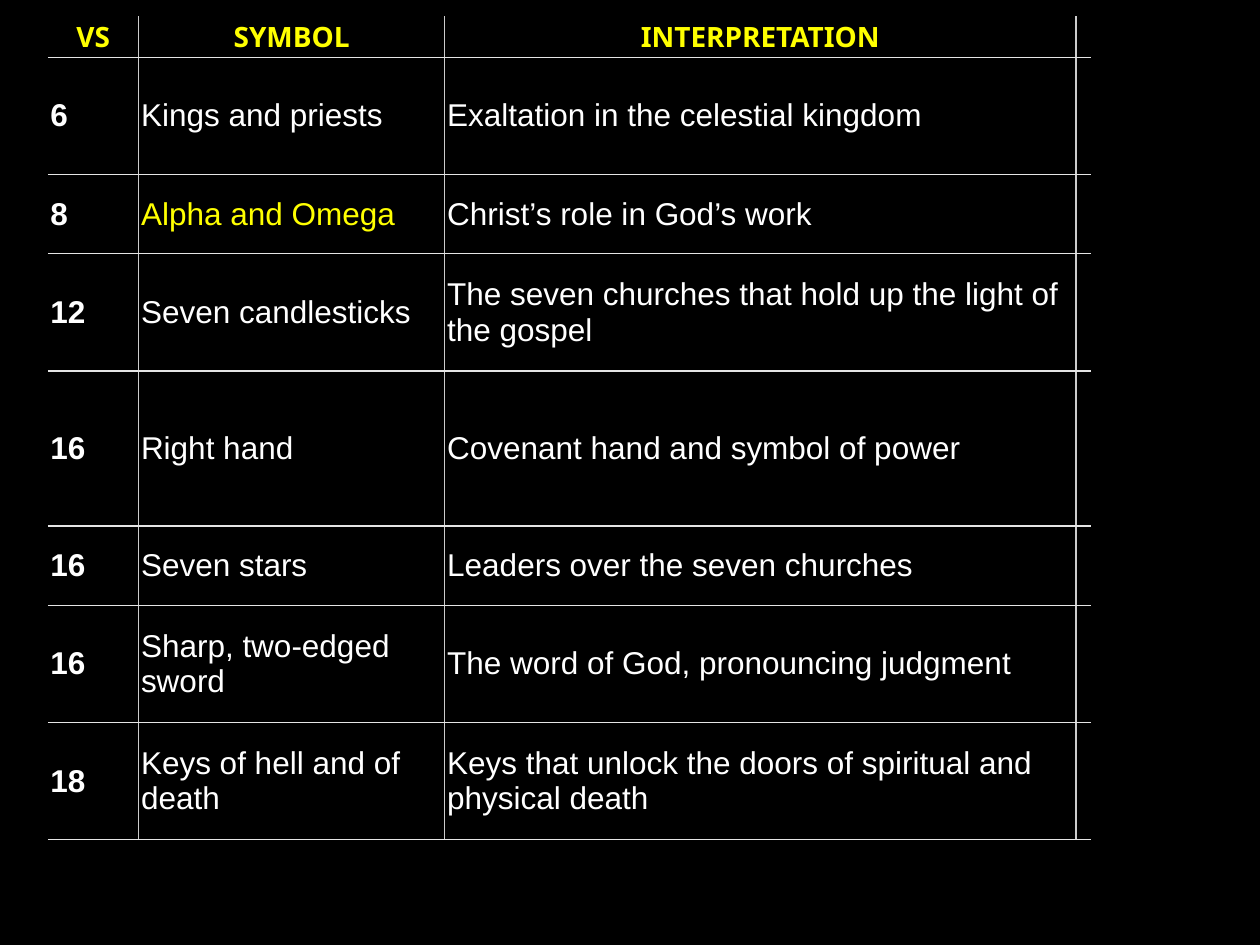
"""Build a slide with a table of symbols and their interpretations."""
from dataclasses import dataclass
from typing import NamedTuple

from lxml.etree import SubElement
from pptx import Presentation
from pptx.dml.color import RGBColor
from pptx.enum.text import MSO_ANCHOR as Anchor, PP_ALIGN as Align
from pptx.oxml.ns import qn
from pptx.util import Inches, Pt


@dataclass(frozen=True)
class Theme:
    background: str = "000000"
    body: str = "FFFFFF"
    accent: str = "FFFF00"
    column_rule: str = "CCCCCC"
    row_rule: str = "E5E5E5"
    head_font: str = "Noto Sans"
    body_font: str = "Arial"
    head_size: int = 16
    body_size: int = 18
    rule_width: float = 0.75


class Entry(NamedTuple):
    verse: str
    symbol: str
    interpretation: str
    height: float
    highlighted: bool = False


THEME = Theme()
PLAIN_STYLE = "{2D5ABB26-0587-4C30-8999-92F81FD0307C}"
LEFT, TOP = 0.38, 0.13
COLUMNS = (0.72, 2.43, 5.01, 0.12)
HEAD_HEIGHT = 0.3
SHORT, MEDIUM, TALL = 0.63, 0.93, 1.23
HEADINGS = ("VS", "SYMBOL", "INTERPRETATION")
ENTRIES = (
    Entry("6", "Kings and priests", "Exaltation in the celestial kingdom", MEDIUM),
    Entry("8", "Alpha and Omega", "Christ’s role in God’s work", SHORT, True),
    Entry("12", "Seven candlesticks",
          "The seven churches that hold up the light of the gospel", MEDIUM),
    Entry("16", "Right hand", "Covenant hand and symbol of power", TALL),
    Entry("16", "Seven stars", "Leaders over the seven churches", SHORT),
    Entry("16", "Sharp, two-edged sword", "The word of God, pronouncing judgment", MEDIUM),
    Entry("18", "Keys of hell and of death",
          "Keys that unlock the doors of spiritual and physical death", MEDIUM),
)


def apply_format(target: object, values: dict) -> None:
    for name, value in values.items():
        setattr(target, name, value)


def write_cell(cell, text: str, color: str, bold: bool, heading: bool = False) -> None:
    para = cell.text_frame.paragraphs[0]
    para.alignment = Align.CENTER if heading else Align.LEFT
    span = para.add_run()
    span.text = text
    apply_format(span.font, {
        "name": THEME.head_font if heading else THEME.body_font,
        "size": Pt(THEME.head_size if heading else THEME.body_size),
        "bold": bold,
    })
    span.font.color.rgb = RGBColor.from_string(color)


def prepare_cell(cell, anchor: Anchor, rules: dict[str, str]) -> None:
    apply_format(cell, {
        "vertical_anchor": anchor,
        "margin_left": Inches(0.02),
        "margin_right": Inches(0.02),
        "margin_top": Inches(0.01),
        "margin_bottom": Inches(0.01),
    })
    properties = cell._tc.get_or_add_tcPr()
    for side, color in rules.items():
        line = SubElement(properties, qn(f"a:ln{side}"), w=str(Pt(THEME.rule_width)))
        fill = SubElement(line, qn("a:solidFill"))
        SubElement(fill, qn("a:srgbClr"), val=color)
    cell.fill.background()


def inner_rules(row: int, column: int) -> dict[str, str]:
    rules = {}
    if column > 0:
        rules["L"] = THEME.column_rule
    if column < len(COLUMNS) - 1:
        rules["R"] = THEME.column_rule
    if row > 0:
        rules["T"] = THEME.row_rule
    rules["B"] = THEME.row_rule
    return rules


def draw_table(page) -> None:
    heights = (HEAD_HEIGHT, *(entry.height for entry in ENTRIES))
    frame = page.shapes.add_table(
        len(heights), len(COLUMNS), Inches(LEFT), Inches(TOP),
        Inches(sum(COLUMNS)), Inches(sum(heights)))
    table = frame.table
    apply_format(table, {"first_row": False, "horz_banding": False})
    table._tbl.tblPr.find(qn("a:tableStyleId")).text = PLAIN_STYLE
    for column, width in zip(table.columns, COLUMNS):
        column.width = Inches(width)
    for index, height in enumerate(heights):
        table.rows[index].height = Inches(height)
        for column in range(len(COLUMNS)):
            prepare_cell(table.cell(index, column),
                         Anchor.MIDDLE if index else Anchor.BOTTOM,
                         inner_rules(index, column))
    for column, heading in enumerate(HEADINGS):
        write_cell(table.cell(0, column), heading, THEME.accent, True, heading=True)
    for row, entry in enumerate(ENTRIES, start=1):
        symbol_color = THEME.accent if entry.highlighted else THEME.body
        write_cell(table.cell(row, 0), entry.verse, THEME.body, True)
        write_cell(table.cell(row, 1), entry.symbol, symbol_color, False)
        write_cell(table.cell(row, 2), entry.interpretation, THEME.body, False)


def main() -> None:
    deck = Presentation()
    apply_format(deck, {"slide_width": Inches(10), "slide_height": Inches(7.5)})
    page = deck.slides.add_slide(deck.slide_layouts[6])
    backdrop = page.background.fill
    backdrop.solid()
    backdrop.fore_color.rgb = RGBColor.from_string(THEME.background)
    draw_table(page)
    deck.save("out.pptx")


if __name__ == "__main__":
    main()
